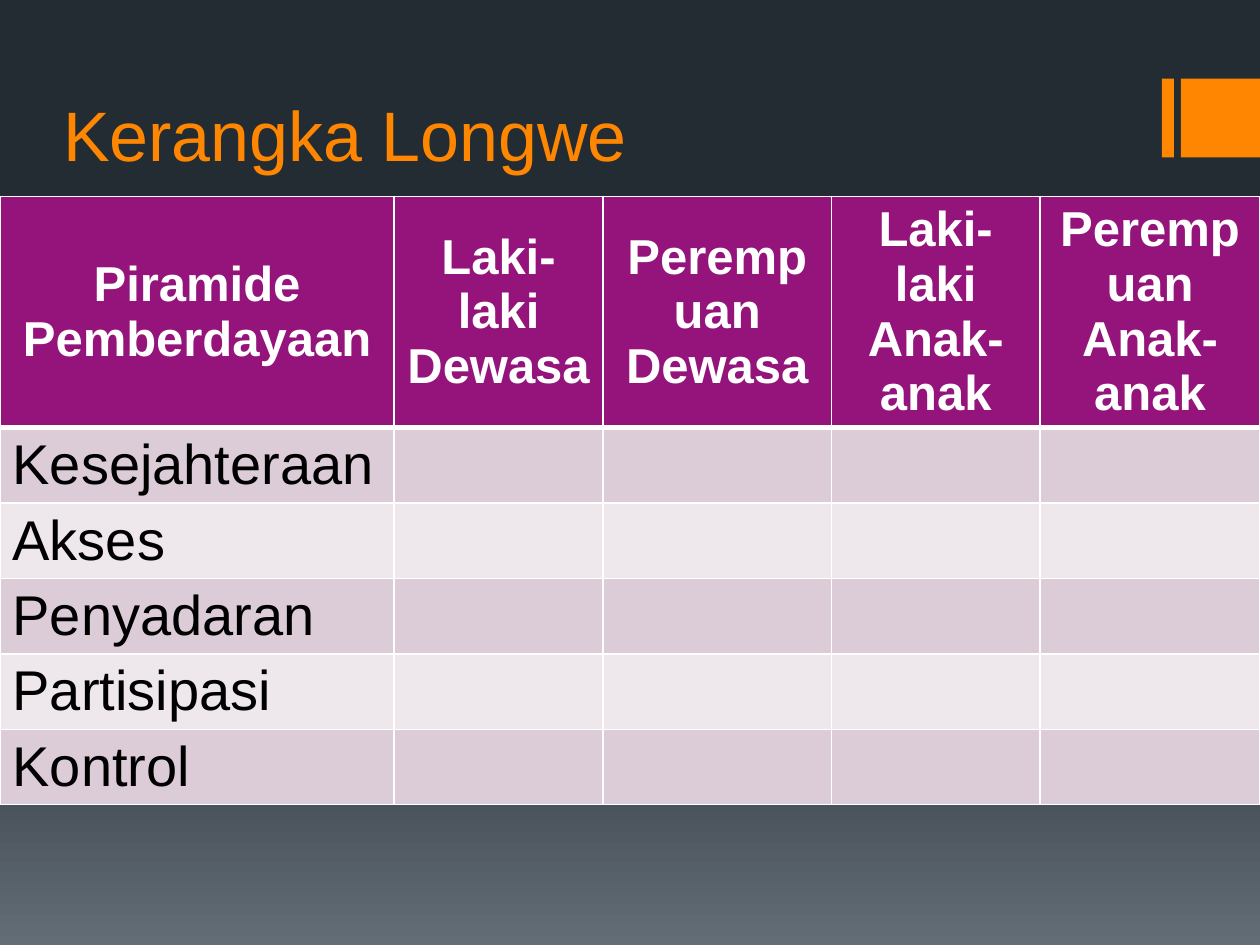
import pptx
import pptx.dml.color
import pptx.enum.shapes
import pptx.enum.text
import pptx.oxml
import pptx.oxml.ns
import pptx.util
from lxml import etree

Pt = pptx.util.Pt
ANCHOR = pptx.enum.text.MSO_ANCHOR
ALIGN = pptx.enum.text.PP_ALIGN
qn = pptx.oxml.ns.qn

FONT = "Arial"
COLORS = {
    "orange": "FF8600",
    "purple": "94147C",
    "band_dark": "DCCCD7",
    "band_light": "EEE7EC",
    "white": "FFFFFF",
    "black": "000000",
}
BACKGROUND_STOPS = [(0, "242C33"), (65, "273037"), (100, "636D76")]

HEADERS = [
    "Piramide Pemberdayaan",
    "Laki-laki Dewasa",
    "Perempuan Dewasa",
    "Laki-laki Anak-anak",
    "Perempuan Anak-anak",
]
LEVELS = ["Kesejahteraan", "Akses", "Penyadaran", "Partisipasi", "Kontrol"]
COLUMN_WIDTHS = [225.2, 119.4, 130.5, 119.3, 125.6]
HEADER_HEIGHT, ROW_HEIGHT = 132, 43.1


def rgb(name):
    return pptx.dml.color.RGBColor.from_string(COLORS[name])


def write_text(tf, text, size, color, bold=False, align=ALIGN.LEFT):
    p = tf.paragraphs[0]
    p.alignment = align
    r = p.add_run()
    r.text = text
    r.font.name = FONT
    r.font.size = Pt(size)
    r.font.bold = bold
    r.font.color.rgb = rgb(color)


def set_background(slide):
    fill = slide.background.fill
    fill.gradient()
    fill.gradient_angle = 270
    stops = slide.background._cSld.find(".//" + qn("a:gsLst"))
    for stop in list(stops):
        stops.remove(stop)
    for percent, color in BACKGROUND_STOPS:
        stop = etree.SubElement(stops, qn("a:gs"), pos=str(percent * 1000))
        etree.SubElement(stop, qn("a:srgbClr"), val=color)


def add_block(slide, left, top, width, height):
    sp = slide.shapes.add_shape(
        pptx.enum.shapes.MSO_SHAPE.RECTANGLE,
        Pt(left), Pt(top), Pt(width), Pt(height))
    sp.shadow.inherit = False
    sp.fill.solid()
    sp.fill.fore_color.rgb = rgb("orange")
    sp.line.fill.background()


def set_title(slide, text):
    sp = slide.shapes.title
    sp.left, sp.top, sp.width, sp.height = Pt(28.8), Pt(13), Pt(626.4), Pt(90.7)
    tf = sp.text_frame
    tf.word_wrap = True
    tf.auto_size = pptx.enum.text.MSO_AUTO_SIZE.NONE
    tf.vertical_anchor = ANCHOR.BOTTOM
    write_text(tf, text, size=40, color="orange")


def set_borders(cell, bottom=1, top=1):
    tc_pr = cell._tc.get_or_add_tcPr()
    widths = {"lnL": 1, "lnR": 1, "lnT": top, "lnB": bottom}
    for i, (tag, width) in enumerate(widths.items()):
        ln = etree.Element(qn("a:" + tag), w=str(Pt(width)))
        fill = etree.SubElement(ln, qn("a:solidFill"))
        etree.SubElement(fill, qn("a:srgbClr"), val=COLORS["white"])
        tc_pr.insert(i, ln)


def fill_cell(cell, color):
    cell.fill.solid()
    cell.fill.fore_color.rgb = rgb(color)


def add_framework_table(slide):
    height = HEADER_HEIGHT + ROW_HEIGHT * len(LEVELS)
    table = slide.shapes.add_table(
        len(LEVELS) + 1, len(HEADERS),
        Pt(0), Pt(112.2), Pt(720), Pt(height)).table
    for column, width in zip(table.columns, COLUMN_WIDTHS):
        column.width = Pt(width)
    table.rows[0].height = Pt(HEADER_HEIGHT)

    for col, header in enumerate(HEADERS):
        cell = table.cell(0, col)
        cell.vertical_anchor = ANCHOR.MIDDLE
        fill_cell(cell, "purple")
        set_borders(cell, bottom=3)
        write_text(cell.text_frame, header, size=28, color="white",
                   bold=True, align=ALIGN.CENTER)

    for row, level in enumerate(LEVELS, start=1):
        table.rows[row].height = Pt(ROW_HEIGHT)
        for col in range(len(HEADERS)):
            cell = table.cell(row, col)
            fill_cell(cell, "band_dark" if row % 2 else "band_light")
            set_borders(cell, top=3 if row == 1 else 1)
        write_text(table.cell(row, 0).text_frame, level, size=32, color="black")


def main():
    prs = pptx.Presentation()
    prs.slide_width, prs.slide_height = Pt(720), Pt(540)
    slide = prs.slides.add_slide(prs.slide_layouts[5])
    set_background(slide)
    add_block(slide, 664, 45, 6.8, 45)
    add_block(slide, 674.8, 45, 45.2, 45)
    set_title(slide, "Kerangka Longwe")
    add_framework_table(slide)
    prs.save("out.pptx")


if __name__ == "__main__":
    main()
